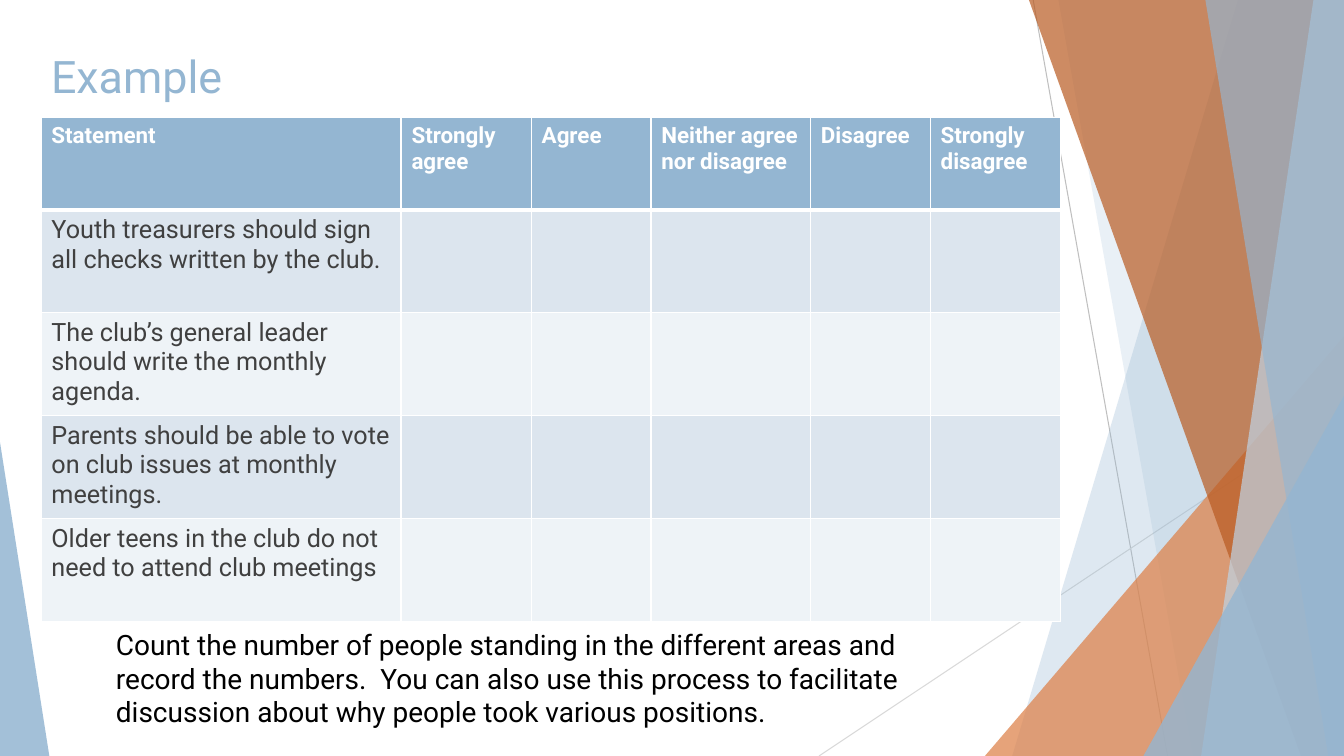
import pptx
import pptx.dml.color
import pptx.enum.shapes
import pptx.enum.text
import pptx.oxml
import pptx.oxml.ns
import pptx.util

W, H = 1280, 720
EMU_PER_PX = 9525
FONT = "Roboto"
COLORS = {
    "blue": "94B6D2", "pale_blue": "BFD3E4", "orange": "DD8047", "rust": "B95B22",
    "row_dark": "DCE5EE", "row_light": "EEF3F7", "white": "FFFFFF",
    "body": "404040", "black": "000000", "rule": "BFBFBF", "light_rule": "D9D9D9",
}
HEADERS = ["Statement", "Strongly agree", "Agree", "Neither agree nor disagree",
           "Disagree", "Strongly disagree"]
STATEMENTS = [
    "Youth treasurers should sign all checks written by the club.",
    "The club’s general leader should write the monthly agenda.",
    "Parents should be able to vote on club issues at monthly meetings.",
    "Older teens in the club do not need to attend club meetings",
]
COL_WIDTHS = [343, 124, 114, 152, 114, 124]
HEADER_HEIGHT, ROW_HEIGHT = 88, 98


def px(n):
    return pptx.util.Emu(n * EMU_PER_PX)


def rgb(name):
    return pptx.dml.color.RGBColor.from_string(COLORS[name])


class SlideBuilder:
    def __init__(self, s):
        self.s = s

    def paint(self, sp, color, alpha):
        """Fill a shape with a colour at alpha percent opacity, without line or shadow."""
        sp.shadow.inherit = False
        sp.line.fill.background()
        sp.fill.solid()
        sp.fill.fore_color.rgb = rgb(color)
        clr = sp._element.spPr.find(".//" + pptx.oxml.ns.qn("a:srgbClr"))
        clr.append(pptx.oxml.parse_xml(
            f'<a:alpha {pptx.oxml.ns.nsdecls("a")} val="{alpha * 1000}"/>'))

    def line(self, x1, y1, x2, y2, color):
        c = self.s.shapes.add_connector(
            pptx.enum.shapes.MSO_CONNECTOR.STRAIGHT, px(x1), px(y1), px(x2), px(y2))
        c.line.color.rgb = rgb(color)
        c.line.width = pptx.util.Pt(0.75)
        c._element.spPr.append(pptx.oxml.parse_xml(
            f'<a:effectLst {pptx.oxml.ns.nsdecls("a")}/>'))

    def band(self, top_x, bottom_x, color, alpha):
        """Full-height band from a slanted left edge to the right slide edge."""
        fb = self.s.shapes.build_freeform(top_x, 0, scale=EMU_PER_PX)
        fb.add_line_segments([(W, 0), (W, H), (bottom_x, H)], close=True)
        self.paint(fb.convert_to_shape(), color, alpha)

    def triangle(self, x, y, w, apex, color, alpha):
        """Triangle standing on the bottom edge of the slide."""
        sp = self.s.shapes.add_shape(
            pptx.enum.shapes.MSO_SHAPE.ISOSCELES_TRIANGLE, px(x), px(y), px(w), px(H - y))
        sp.adjustments[0] = apex
        self.paint(sp, color, alpha)

    def run(self, tf, text, size, color, bold=False):
        """Add one formatted run to the first paragraph of a text frame."""
        tf.word_wrap = True
        p = tf.paragraphs[0]
        p.alignment = pptx.enum.text.PP_ALIGN.LEFT
        r = p.add_run()
        r.text = text
        r.font.name = FONT
        r.font.size = pptx.util.Pt(size)
        r.font.bold = bold
        r.font.color.rgb = rgb(color)

    def title(self, text, x, y, w, h, top_inset):
        sp = self.s.shapes.title
        sp.left, sp.top, sp.width, sp.height = px(x), px(y), px(w), px(h)
        tf = sp.text_frame
        tf.auto_size = pptx.enum.text.MSO_AUTO_SIZE.NONE
        tf.vertical_anchor = pptx.enum.text.MSO_ANCHOR.TOP
        tf.margin_top = px(top_inset)
        self.run(tf, text, 32, "blue")

    def text(self, text, x, y, w, h, size, color):
        tf = self.s.shapes.add_textbox(px(x), px(y), px(w), px(h)).text_frame
        self.run(tf, text, size, color)
        tf.auto_size = pptx.enum.text.MSO_AUTO_SIZE.SHAPE_TO_FIT_TEXT

    def cell(self, cell, fill, bottom=1):
        """Give a cell white borders, its margins and a fill."""
        cell.margin_left = cell.margin_right = px(10)
        cell.margin_top = cell.margin_bottom = px(5)
        tcPr = cell._tc.get_or_add_tcPr()
        for side, width in (("L", 1), ("R", 1), ("T", 1), ("B", bottom)):
            tcPr.append(pptx.oxml.parse_xml(
                f'<a:ln{side} {pptx.oxml.ns.nsdecls("a")} w="{width * 12700}">'
                f'<a:solidFill><a:srgbClr val="{COLORS["white"]}"/></a:solidFill>'
                f'</a:ln{side}>'))
        cell.fill.solid()
        cell.fill.fore_color.rgb = rgb(fill)

    def table(self, x, y):
        heights = [HEADER_HEIGHT] + [ROW_HEIGHT] * len(STATEMENTS)
        t = self.s.shapes.add_table(
            len(heights), len(COL_WIDTHS), px(x), px(y),
            px(sum(COL_WIDTHS)), px(sum(heights))).table
        for col, width in zip(t.columns, COL_WIDTHS):
            col.width = px(width)
        for row, height in zip(t.rows, heights):
            row.height = px(height)
        for i, header in enumerate(HEADERS):
            self.cell(t.cell(0, i), "blue", bottom=3)
            self.run(t.cell(0, i).text_frame, header, 16, "white", bold=True)
        for i, statement in enumerate(STATEMENTS, 1):
            for j in range(len(COL_WIDTHS)):
                self.cell(t.cell(i, j), "row_dark" if i % 2 else "row_light")
            self.run(t.cell(i, 0).text_frame, statement, 18, "body")


def main():
    prs = pptx.Presentation()
    prs.slide_width, prs.slide_height = px(W), px(H)
    b = SlideBuilder(prs.slides.add_slide(prs.slide_layouts[5]))

    b.line(984, 0, 1112, H, "rule")
    b.line(W, 387, 780, H, "light_rule")
    b.band(1179, 964, "blue", 30)
    b.band(1008, 1136, "blue", 20)
    b.triangle(938, 320, 342, 1, "orange", 72)
    b.band(980, 1239, "rust", 70)
    b.band(1251, 1144, "pale_blue", 70)
    b.band(1148, 1265, "blue", 65)
    b.triangle(1089, 377, 191, 1, "blue", 80)
    b.triangle(0, 421, 47, 0, "blue", 85)

    b.title("Example", 39, -9, 656, 138, top_inset=55)
    b.table(39, 112)
    b.text("Count the number of people standing in the different areas and record "
           "the numbers.  You can also use this process to facilitate discussion "
           "about why people took various positions.",
           101, 593, 840, 107, 20, "black")
    prs.save("out.pptx")


if __name__ == "__main__":
    main()
